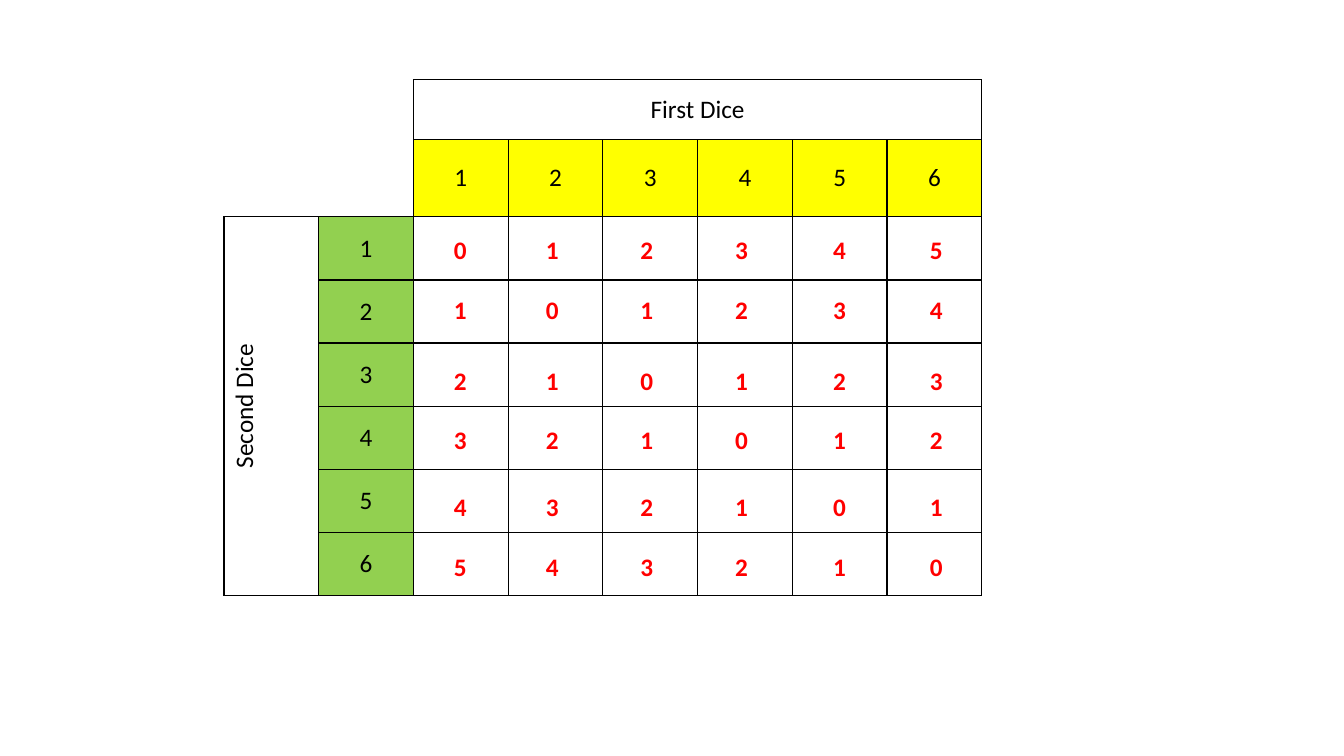
from lxml import etree
from pptx import Presentation
from pptx.dml.color import RGBColor
from pptx.enum.text import MSO_ANCHOR, MSO_AUTO_SIZE, PP_ALIGN
from pptx.oxml.ns import qn
from pptx.util import Pt

CENTER = PP_ALIGN.CENTER
MIDDLE = MSO_ANCHOR.MIDDLE
FIT_SHAPE = MSO_AUTO_SIZE.SHAPE_TO_FIT_TEXT

COLORS = {
    "paper": "FFFFFF",
    "ink": "000000",
    "first_dice": "FFFF00",
    "second_dice": "92D050",
    "difference": "FF0000",
}
FACES = range(1, 7)
HEADERS = 2  # header rows above, and header columns left of, the outcomes
ROW_HEIGHTS = [43, 55] + [45.1] * len(FACES)

# Offsets of the difference labels from the table's top left corner
DIFFERENCE_LEFTS = [149, 214.6, 282.2, 349.9, 419.8, 488.9]
DIFFERENCE_TOPS = [106.6, 149.8, 200.2, 242.6, 290.2, 333.4]
DIFFERENCE_SIZE = (39.6, 29)


def color(name):
    return RGBColor.from_string(COLORS[name])


def write(frame, text, color_name, bold=False):
    paragraph = frame.paragraphs[0]
    paragraph.text = text
    paragraph.alignment = CENTER
    font = paragraph.font
    font.name = "Calibri"
    font.size = Pt(18)
    font.bold = bold
    font.color.rgb = color(color_name)


def set_borders(cell, sides):
    """Rule the given sides of the cell and leave the others open."""
    properties = cell._tc.get_or_add_tcPr()
    for side in "LRTB":
        line = etree.SubElement(properties, qn(f"a:ln{side}"), w=str(Pt(1)))
        if side in sides:
            fill = etree.SubElement(line, qn("a:solidFill"))
            etree.SubElement(fill, qn("a:srgbClr"), val=COLORS["ink"])
        else:
            etree.SubElement(line, qn("a:noFill"))


def format_cell(cell, row, column):
    sides = "LRTB"
    fill = "paper"
    if row < HEADERS and column < HEADERS:
        sides = "R" * (column == HEADERS - 1) + "B" * (row == HEADERS - 1)
    elif row == HEADERS - 1:
        fill = "first_dice"
    elif column == HEADERS - 1:
        fill = "second_dice"
    set_borders(cell, sides)
    cell.fill.solid()
    cell.fill.fore_color.rgb = color(fill)
    cell.vertical_anchor = MIDDLE


def add_dice_table(slide, left, top, width):
    count = len(ROW_HEIGHTS)
    table = slide.shapes.add_table(
        count, count, Pt(left), Pt(top), Pt(width), Pt(sum(ROW_HEIGHTS))
    ).table
    table.first_row = False
    table.horz_banding = False
    for index, height in enumerate(ROW_HEIGHTS):
        table.rows[index].height = Pt(height)
        table.columns[index].width = Pt(width / count)
        for column in range(count):
            format_cell(table.cell(index, column), index, column)

    first_title = table.cell(0, HEADERS)
    first_title.merge(table.cell(0, count - 1))
    write(first_title.text_frame, "First Dice", "ink")
    second_title = table.cell(HEADERS, 0)
    second_title.merge(table.cell(count - 1, 0))
    write(second_title.text_frame, "Second Dice", "ink")
    second_title._tc.get_or_add_tcPr().set("vert", "vert270")

    for face in FACES:
        position = HEADERS + face - 1
        write(table.cell(HEADERS - 1, position).text_frame, str(face), "ink")
        write(table.cell(position, HEADERS - 1).text_frame, str(face), "ink")


def add_differences(slide, left, top):
    width, height = DIFFERENCE_SIZE
    for first, x in zip(FACES, DIFFERENCE_LEFTS):
        for second, y in zip(FACES, DIFFERENCE_TOPS):
            label = slide.shapes.add_textbox(
                Pt(left + x), Pt(top + y), Pt(width), Pt(height)
            )
            frame = label.text_frame
            frame.word_wrap = True
            frame.auto_size = FIT_SHAPE
            write(frame, str(abs(first - second)), "difference", bold=True)


def main():
    presentation = Presentation()
    presentation.slide_width = Pt(960)
    presentation.slide_height = Pt(540)
    slide = presentation.slides.add_slide(presentation.slide_layouts[6])
    left, top = 160, 56.9
    add_dice_table(slide, left, top, width=541.4)
    add_differences(slide, left, top)
    presentation.save("out.pptx")


if __name__ == "__main__":
    main()
